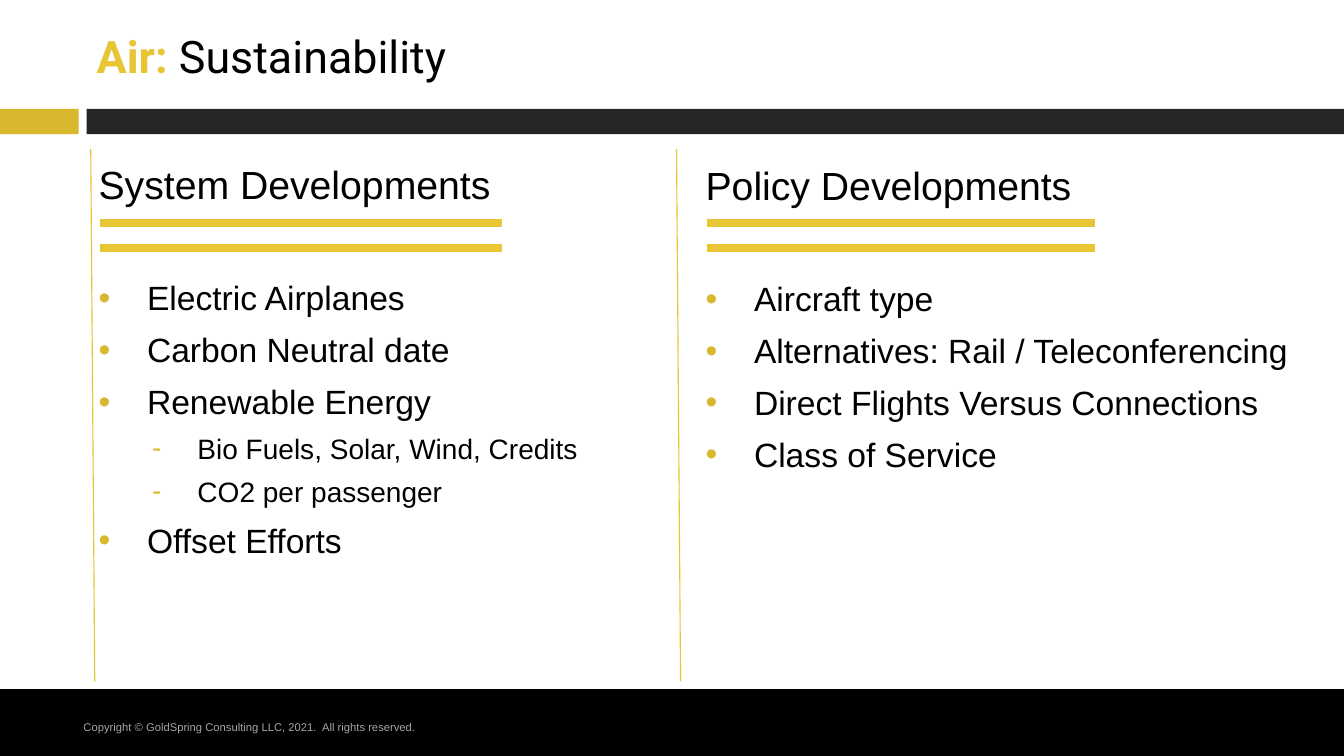
from lxml.etree import SubElement
from pptx import Presentation
from pptx.dml.color import RGBColor
from pptx.enum.shapes import MSO_CONNECTOR as CONN, MSO_SHAPE as SHAPE
from pptx.enum.text import MSO_ANCHOR as ANCHOR
from pptx.oxml.ns import qn
from pptx.util import Emu, Pt

PX = 9144  # 100 px to the inch
GOLD, BULLET, BLACK, WHITE = "E7C535", "DAB82E", "000000", "FFFFFF"


def px(n):
    return Emu(n * PX)


def rgb(value):
    return RGBColor.from_string(value)


class Deck:
    # level: (marker, left margin, hanging indent, size, space before)
    LEVELS = [("•", 50, -48, 24, 8.3), ("-", 100, -45, 20, 6.9)]
    HEADING_GAP = 50

    def __init__(self, width, height):
        self.prs = Presentation()
        self.prs.slide_width, self.prs.slide_height = px(width), px(height)
        self.slide = self.prs.slides.add_slide(self.prs.slide_layouts[6])

    def rect(self, x, y, w, h, color, line=None):
        sp = self.slide.shapes.add_shape(SHAPE.RECTANGLE, px(x), px(y), px(w), px(h))
        sp.shadow.inherit = False
        sp.fill.solid()
        sp.fill.fore_color.rgb = rgb(color)
        if line:
            sp.line.color.rgb = rgb(color)
            sp.line.width = Pt(line)
        else:
            sp.line.fill.background()

    def line(self, x1, y1, x2, y2, weight):
        ln = self.slide.shapes.add_connector(CONN.STRAIGHT, px(x1), px(y1), px(x2), px(y2))
        ln.line.color.rgb = rgb(GOLD)
        ln.line.width = Pt(weight)
        SubElement(ln._element.spPr, qn("a:effectLst"))

    def box(self, x, y, w, h, anchor=ANCHOR.TOP):
        tf = self.slide.shapes.add_textbox(px(x), px(y), px(w), px(h)).text_frame
        tf.word_wrap = True
        tf.vertical_anchor = anchor
        return tf

    def run(self, p, text, size, color=BLACK, font="Arial", bold=False):
        r = p.add_run()
        r.text = text
        r.font.name, r.font.size, r.font.bold = font, Pt(size), bold
        r.font.color.rgb = rgb(color)

    def indent(self, p, left, first):
        pPr = p._p.get_or_add_pPr()
        pPr.set("marL", str(px(left)))
        pPr.set("indent", str(px(first)))
        return pPr

    def bullet(self, p, level, text, before=None):
        marker, left, first, size, gap = self.LEVELS[level]
        p.level = level
        p.space_before = Pt(before or gap)
        pPr = self.indent(p, left, first)
        SubElement(SubElement(pPr, qn("a:buClr")), qn("a:srgbClr"), val=BULLET)
        SubElement(pPr, qn("a:buFont"), typeface="Arial")
        SubElement(pPr, qn("a:buChar"), char=marker)
        self.run(p, text, size)

    def column(self, x, y, w, heading, items):
        tf = self.box(x, y, w, 525)
        tf.margin_top = px(9)
        p = tf.paragraphs[0]
        self.indent(p, 2, 0)
        self.run(p, heading, 28)
        for i, (level, text) in enumerate(items):
            self.bullet(tf.add_paragraph(), level, text, None if i else self.HEADING_GAP)


def main():
    deck = Deck(1333, 750)

    # Footer and header bands
    deck.rect(0, 685, 1333, 65, BLACK, 1.5)
    deck.rect(0, 102, 1333, 35, WHITE)
    deck.rect(0, 108, 78, 25, BULLET)
    deck.rect(86, 108, 1247, 25, "262626")
    p = deck.box(73, 710, 490, 22, ANCHOR.MIDDLE).paragraphs[0]
    deck.run(p, "Copyright © GoldSpring Consulting LLC, 2021.  All rights reserved.", 8, "A6A6A6")

    # Column dividers
    for x in (671, 90):
        deck.line(x, 148, x + 4, 676, 0.79)

    # Title
    p = deck.box(86, 25, 1192, 61, ANCHOR.MIDDLE).paragraphs[0]
    deck.run(p, "Air: ", 32, GOLD, "Roboto", True)
    deck.run(p, "Sustainability", 32, BLACK, "Roboto")

    # Text columns
    deck.column(86, 150, 572, "System Developments", [
        (0, "Electric Airplanes"),
        (0, "Carbon Neutral date"),
        (0, "Renewable Energy"),
        (1, "Bio Fuels, Solar, Wind, Credits"),
        (1, "CO2 per passenger"),
        (0, "Offset Efforts"),
    ])
    deck.column(688, 151, 645, "Policy Developments", [
        (0, "Aircraft type"),
        (0, "Alternatives: Rail / Teleconferencing"),
        (0, "Direct Flights Versus Connections"),
        (0, "Class of Service"),
    ])

    # Double rules under the headings
    for left, right in ((99, 498), (701, 1086)):
        for y in (221, 246):
            deck.line(left, y, right, y, 6)

    deck.prs.save("out.pptx")


if __name__ == "__main__":
    main()
